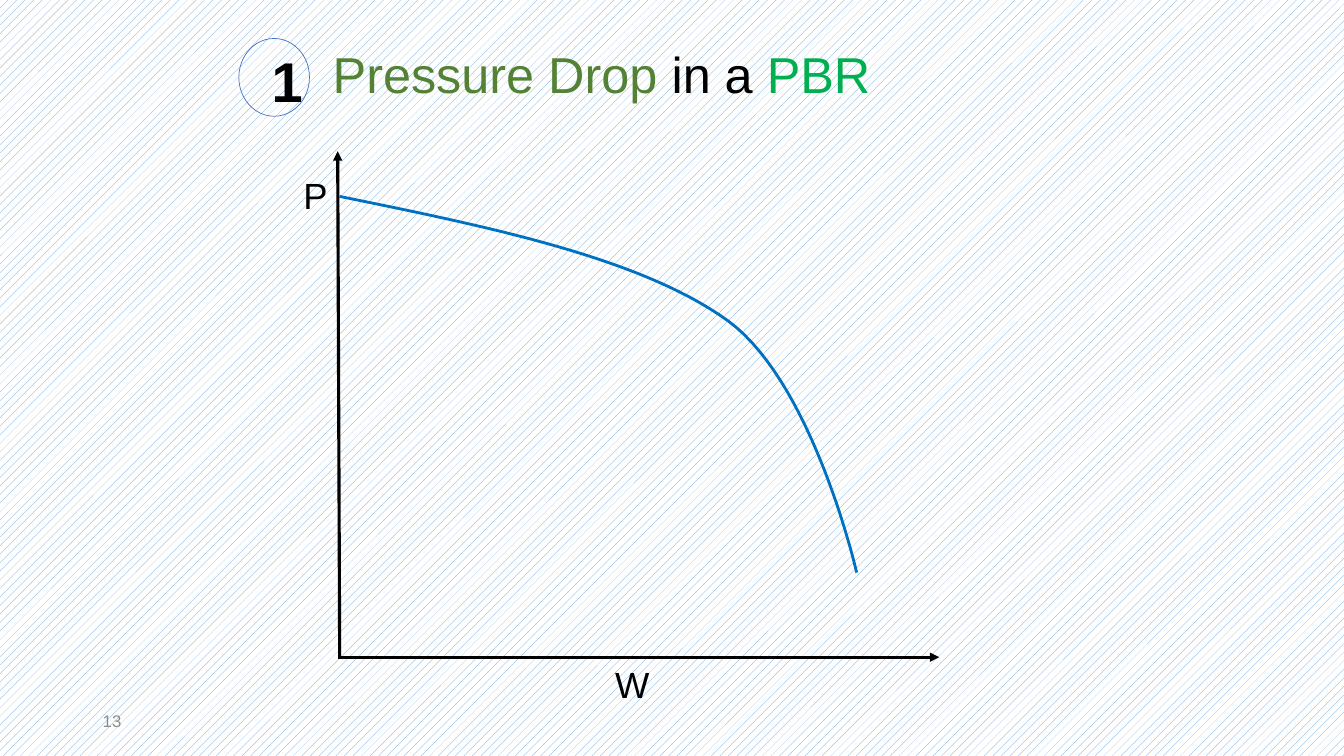
from lxml import etree
from pptx import Presentation
from pptx.dml.color import RGBColor
from pptx.enum.dml import MSO_PATTERN
from pptx.enum.shapes import MSO_CONNECTOR, MSO_SHAPE
from pptx.enum.text import MSO_ANCHOR, MSO_AUTO_SIZE, PP_ALIGN
from pptx.oxml.ns import qn
from pptx.util import Cm, Pt

DOTS = MSO_PATTERN.PERCENT_20
STRAIGHT = MSO_CONNECTOR.STRAIGHT
ELLIPSE = MSO_SHAPE.OVAL
TOP, MIDDLE = MSO_ANCHOR.TOP, MSO_ANCHOR.MIDDLE
FIXED = MSO_AUTO_SIZE.NONE
LEFT, RIGHT = PP_ALIGN.LEFT, PP_ALIGN.RIGHT
TITLE_ONLY = 5
CURVE_STEPS = 30


def color(value):
    return RGBColor.from_string(value)


def write(box, spans, size, align=RIGHT, anchor=TOP, wrap=True, bold=False):
    frame = box.text_frame
    frame_format = {"word_wrap": wrap, "auto_size": FIXED, "vertical_anchor": anchor}
    for name, value in frame_format.items():
        setattr(frame, name, value)
    para = frame.paragraphs[0]
    para.alignment = align
    para.line_spacing = 1.0
    for text, shade in spans:
        span = para.add_run()
        span.text = text
        for name, value in {"name": "Arial", "size": Pt(size), "bold": bold}.items():
            setattr(span.font, name, value)
        span.font.color.rgb = color(shade)


deck = Presentation()
deck.slide_width, deck.slide_height = Cm(33.87), Cm(19.05)
page = deck.slides.add_slide(deck.slide_layouts[TITLE_ONLY])
shapes = page.shapes

background = page.background.fill
background.patterned()
background.pattern = DOTS
background.fore_color.rgb = color("5B9BD5")
background.back_color.rgb = color("FFFFFF")

title = shapes.title
title_place = {"left": 8.13, "top": 0.97, "width": 14.2, "height": 1.8}
for name, value in title_place.items():
    setattr(title, name, Cm(value))
title_spans = [("Pressure Drop ", "548235"), ("in a ", "000000"), ("PBR", "00B050")]
write(title, title_spans, 36, align=LEFT, wrap=False)

labels = [
    ("W", (14.66, 16.56, 1.96, 1.4), "000000", {"size": 26}),
    ("P", (7.21, 4.24, 1.3, 1.4), "000000", {"size": 26}),
    ("1", (6.43, 1.04, 1.45, 1.96), "000000", {"size": 40, "bold": True}),
    ("13", (2.34, 17.65, 7.62, 1.02), "8C8C8C",
     {"size": 12, "align": LEFT, "anchor": MIDDLE}),
]
for text, place, shade, text_format in labels:
    box = shapes.add_textbox(*map(Cm, place))
    write(box, [(text, shade)], **text_format)

badge = shapes.add_shape(ELLIPSE, Cm(6.02), Cm(0.97), Cm(1.78), Cm(1.96))

curve_parts = [
    [(8.56, 4.95), (12.34, 5.72), (16.15, 6.5), (18.34, 8.08)],
    [(18.34, 8.08), (20.5, 9.65), (21.59, 14.43), (21.59, 14.43)],
]
points = []
for part in curve_parts:
    for step in range(1, CURVE_STEPS + 1):
        t = step / CURVE_STEPS
        weights = ((1 - t) ** 3, 3 * t * (1 - t) ** 2, 3 * t * t * (1 - t), t ** 3)
        points.append(tuple(
            Cm(sum(weight * value for weight, value in zip(weights, values)))
            for values in zip(*part)
        ))
start_x, start_y = curve_parts[0][0]
builder = shapes.build_freeform(Cm(start_x), Cm(start_y))
builder.add_line_segments(points, close=False)
pressure_curve = builder.convert_to_shape()

for outline, shade, width in [(badge, "4472C4", 0.5), (pressure_curve, "0070C0", 2)]:
    outline.shadow.inherit = False
    outline.fill.background()
    outline.line.color.rgb = color(shade)
    outline.line.width = Pt(width)

axes = [(8.56, 16.56, 8.51, 3.81), (8.53, 16.56, 23.67, 16.56)]
for ends in axes:
    axis = shapes.add_connector(STRAIGHT, *map(Cm, ends))
    axis.line.color.rgb = color("000000")
    axis.line.width = Pt(2.25)
    properties = axis.line._get_or_add_ln()
    etree.SubElement(properties, qn("a:tailEnd"), type="triangle")
    etree.SubElement(properties.getparent(), qn("a:effectLst"))

deck.save("out.pptx")
